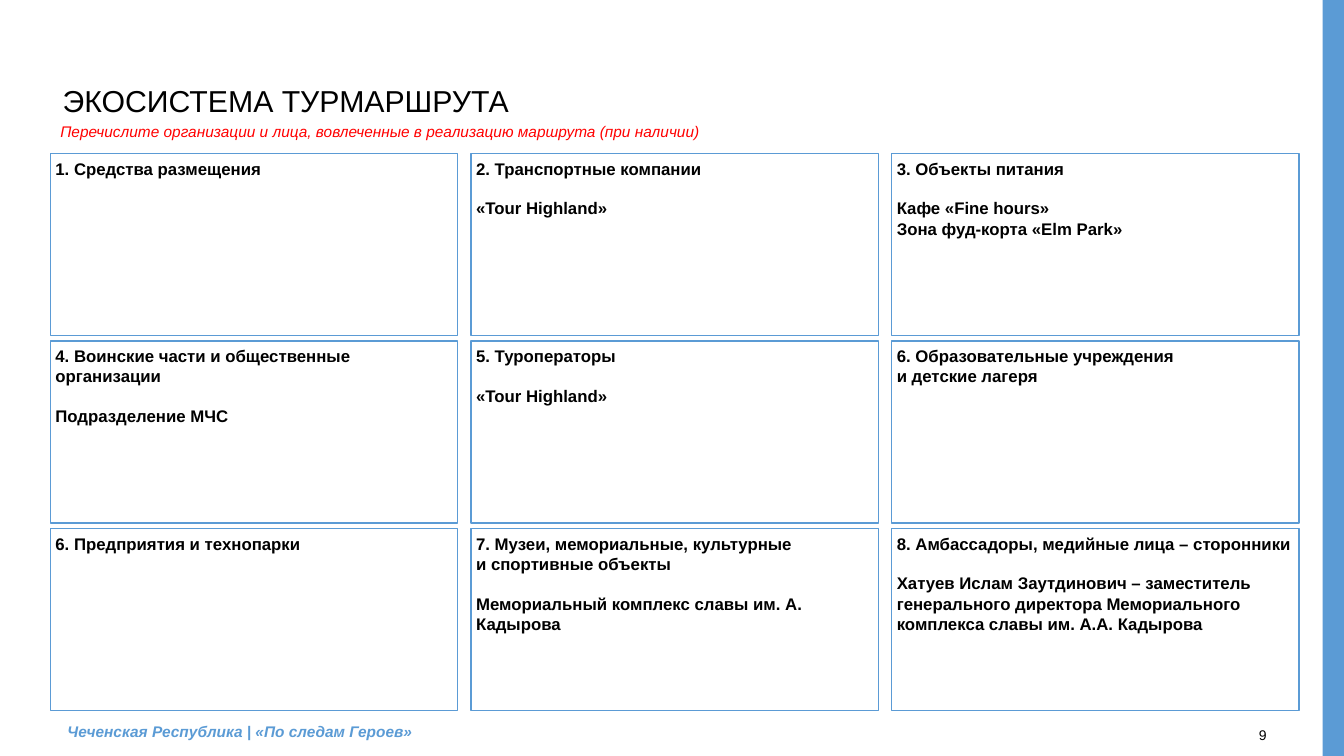
from pptx import Presentation
from pptx.dml.color import RGBColor
from pptx.enum.shapes import MSO_SHAPE
from pptx.enum.text import MSO_ANCHOR, PP_ALIGN
from pptx.util import Pt

BLUE, RED, BLACK, WHITE = "5B9BD5", "FF0000", "000000", "FFFFFF"

PARTICIPANTS = [
    ["1. Средства размещения"],
    ["2. Транспортные компании", "«Tour Highland»"],
    ["3. Объекты питания", "Кафе «Fine hours»", "Зона фуд-корта «Elm Park»"],
    ["4. Воинские части и общественные организации", "Подразделение МЧС"],
    ["5. Туроператоры", "«Tour Highland»"],
    ["6. Образовательные учреждения\vи детские лагеря"],
    ["6. Предприятия и технопарки"],
    ["7. Музеи, мемориальные, культурные\vи спортивные объекты",
     "Мемориальный комплекс славы им. А. Кадырова"],
    ["8. Амбассадоры, медийные лица – сторонники",
     "Хатуев Ислам Заутдинович – заместитель генерального директора "
     "Мемориального комплекса славы им. А.А. Кадырова"],
]


def color(value):
    """Turn a hex string into a colour."""
    return RGBColor.from_string(value)


def write(shape, lines, size, tint, margins, bold=False, italic=False,
          anchor=MSO_ANCHOR.TOP):
    """Fill a shape with left-aligned paragraphs in one format."""
    frame = shape.text_frame
    frame.text = "\n".join(lines)
    frame.word_wrap = True
    frame.vertical_anchor = anchor
    frame.margin_left = frame.margin_right = Pt(margins[0])
    frame.margin_top = frame.margin_bottom = Pt(margins[1])
    for paragraph in frame.paragraphs:
        paragraph.alignment = PP_ALIGN.LEFT
        for run in paragraph.runs:
            run.font.name = "Arial"
            run.font.size = Pt(size)
            run.font.bold = bold
            run.font.italic = italic
            run.font.color.rgb = color(tint)


def add_rectangle(slide, left, top, width, height, fill):
    """Add a flat rectangle without an outline."""
    shape = slide.shapes.add_shape(
        MSO_SHAPE.RECTANGLE, Pt(left), Pt(top), Pt(width), Pt(height))
    shape.shadow.inherit = False
    shape.fill.solid()
    shape.fill.fore_color.rgb = color(fill)
    shape.line.fill.background()
    return shape


def add_text(slide, left, top, width, height):
    """Add an empty text box."""
    return slide.shapes.add_textbox(Pt(left), Pt(top), Pt(width), Pt(height))


def add_card(slide, left, top, width, height, lines):
    """Add one outlined card with a heading and its participants."""
    card = add_rectangle(slide, left, top, width, height, WHITE)
    card.line.color.rgb = color(BLUE)
    card.line.width = Pt(1)
    write(card, lines, 12, BLACK, (3.6, 3.6), bold=True)
    if len(lines) > 1:
        card.text_frame.paragraphs[1].space_before = Pt(14)


def add_card_grid(slide, left, top, width, height):
    """Lay out the participant cards in three columns and three rows."""
    column_gap, row_gap = 9.5, 3.8
    card_width = (width - 2 * column_gap) / 3
    card_height = (height - 2 * row_gap) / 3
    for index, lines in enumerate(PARTICIPANTS):
        row, column = divmod(index, 3)
        add_card(slide, left + column * (card_width + column_gap),
                 top + row * (card_height + row_gap),
                 card_width, card_height, lines)


def add_header(slide, left, top, width, height):
    """Place the title and the red hint below it."""
    title = slide.shapes.title
    title.left, title.top = Pt(left + 6.5), Pt(top)
    title.width, title.height = Pt(width), Pt(32)
    write(title, ["ЭКОСИСТЕМА ТУРМАРШРУТА"], 21.6, BLACK, (2.2, 2.2),
          anchor=MSO_ANCHOR.MIDDLE)
    hint = add_text(slide, left, top + height - 21, width, 21)
    write(hint, ["Перечислите организации и лица, вовлеченные в реализацию "
                 "маршрута (при наличии)"], 11, RED, (7.2, 3.6), italic=True)


def add_footer(slide, left, top, width, height):
    """Place the route name and the page number."""
    route = add_text(slide, left, top, 572, height)
    write(route, ["Чеченская Республика | «По следам Героев»"], 11, BLUE,
          (3.6, 3.6), bold=True, italic=True)
    number = add_text(slide, left + width - 10, top + 0.7, 10, 18)
    write(number, ["9"], 10, BLACK, (0, 0))
    number.text_frame.paragraphs[0].line_spacing = 1.5


def main():
    """Build the slide and save it."""
    presentation = Presentation()
    presentation.slide_width, presentation.slide_height = Pt(960), Pt(540)
    slide = presentation.slides.add_slide(presentation.slide_layouts[5])
    add_rectangle(slide, 944.8, 0, 15.2, 540, BLUE)
    add_header(slide, 36, 56, 855, 49)
    add_card_grid(slide, 36, 109.6, 892, 398)
    add_footer(slide, 44.6, 512, 864.7, 21)
    presentation.save("out.pptx")


if __name__ == "__main__":
    main()
